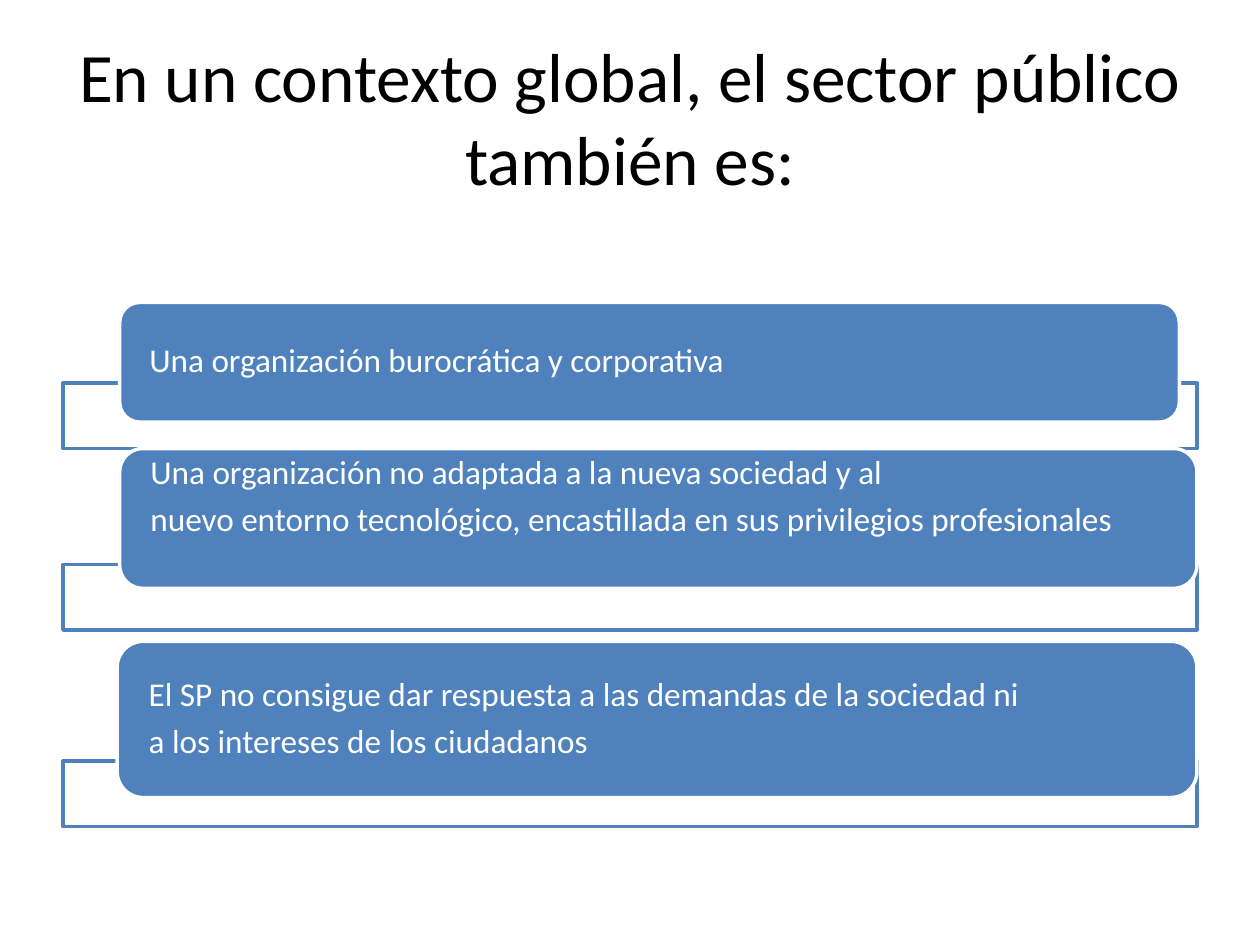
import pptx
import pptx.util
import pptx.dml.color
import pptx.enum.shapes
import pptx.enum.text
import pptx.oxml.ns
import lxml.etree

COLORS = {"blue": "4F81BD", "white": "FFFFFF", "black": "000000"}
SHAPES = pptx.enum.shapes.MSO_SHAPE
ANCHORS = pptx.enum.text.MSO_ANCHOR
ALIGN = pptx.enum.text.PP_ALIGN
Inches = pptx.util.Inches
Pt = pptx.util.Pt

deck = pptx.Presentation()
deck.slide_width = Inches(10)
deck.slide_height = Inches(7.5)
slide = deck.slides.add_slide(deck.slide_layouts[5])

margin = deck.slide_width * 0.05
content_width = deck.slide_width - 2 * margin


def color(name):
    return pptx.dml.color.RGBColor.from_string(COLORS[name])


def add_panel(kind, left, top, width, height, fill, line):
    panel = slide.shapes.add_shape(kind, int(left), int(top), int(width), int(height))
    panel.shadow.inherit = False
    panel.fill.solid()
    panel.fill.fore_color.rgb = color(fill)
    panel.line.color.rgb = color(line)
    panel.line.width = Pt(2)
    return panel


heading = slide.shapes.title
heading.left, heading.top = int(margin), int(deck.slide_height * 0.04)
heading.width, heading.height = int(content_width), Inches(1.25)
heading.text_frame.text = "En un contexto global, el sector público también es:"
heading.text_frame.vertical_anchor = ANCHORS.MIDDLE
heading.text_frame.paragraphs[0].alignment = ALIGN.CENTER
heading_font = heading.text_frame.paragraphs[0].runs[0].font
heading_font.name = "Calibri"
heading_font.size = Pt(39.6)
heading_font.color.rgb = color("black")

traits = [
    (3.04, 0.95, 2.4, 8.41, 0.95, ANCHORS.MIDDLE,
     ["Una organización burocrática y corporativa"]),
    (4.48, 0.95, 3.56, 8.55, 1.11, ANCHORS.TOP,
     ["Una organización no adaptada a la nueva sociedad y al",
      "nuevo entorno tecnológico, encastillada en sus privilegios profesionales"]),
    (6.04, 0.93, 5.09, 8.57, 1.24, ANCHORS.MIDDLE,
     ["El SP no consigue dar respuesta a las demandas de la sociedad ni",
      "a los intereses de los ciudadanos"]),
]

for frame_top, left, top, width, height, anchor, lines in traits:
    frame = add_panel(SHAPES.RECTANGLE, margin, Inches(frame_top),
                      content_width, Inches(0.52), "white", "blue")
    frame_color = frame.fill._xPr.find(".//" + pptx.oxml.ns.qn("a:srgbClr"))
    lxml.etree.SubElement(frame_color, pptx.oxml.ns.qn("a:alpha"), val="90000")

    trait = add_panel(SHAPES.ROUNDED_RECTANGLE, Inches(left), Inches(top),
                      Inches(width), Inches(height), "blue", "white")
    wording = trait.text_frame
    wording.text = "\n".join(lines)
    wording.word_wrap = True
    wording.vertical_anchor = anchor
    wording.margin_left = wording.margin_right = Inches(0.19)
    wording.margin_top = wording.margin_bottom = 0
    for paragraph in wording.paragraphs:
        paragraph.alignment = ALIGN.LEFT
        paragraph.line_spacing = 0.9
        paragraph.space_after = Pt(6.65)
        font = paragraph.runs[0].font
        font.name = "Calibri"
        font.size = Pt(19)
        font.color.rgb = color("white")

deck.save("out.pptx")
